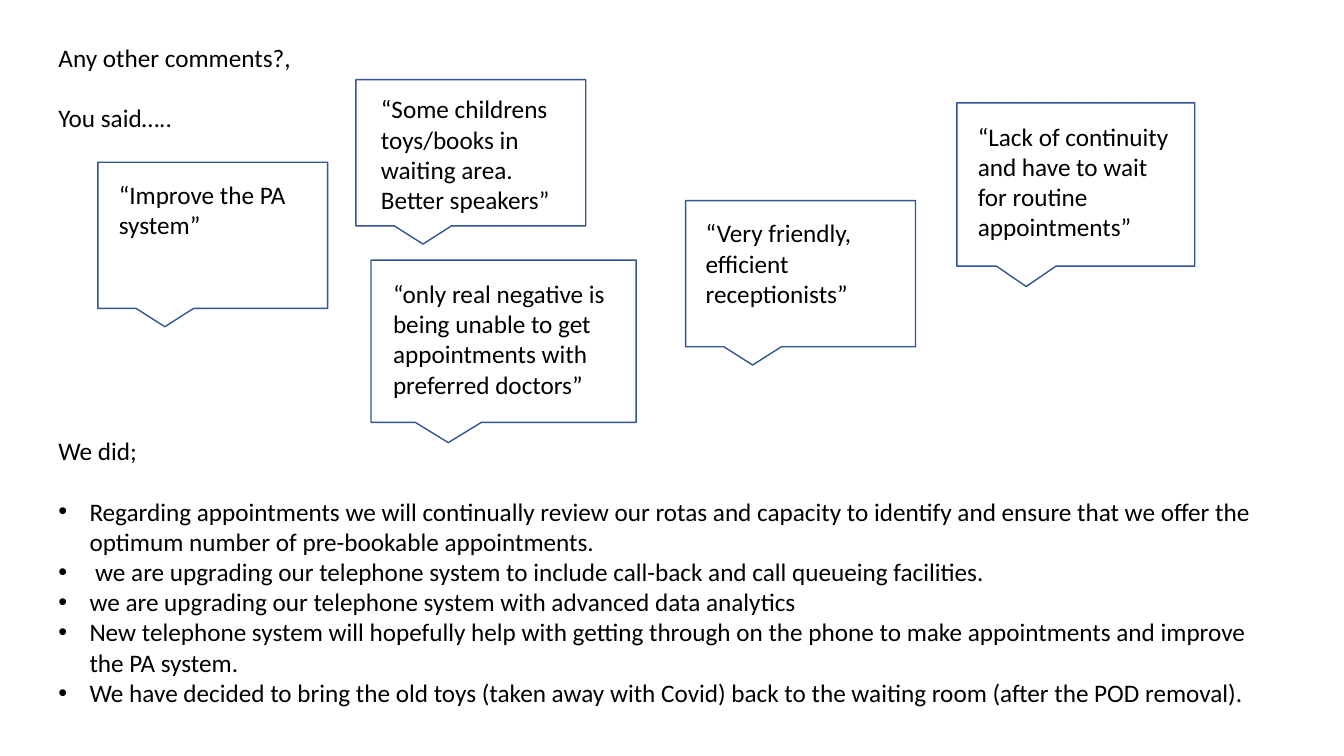
from pptx import Presentation
from pptx.dml.color import RGBColor
from pptx.enum.shapes import MSO_SHAPE as Shape
from pptx.enum.text import MSO_ANCHOR as Anchor, PP_ALIGN as Align
from pptx.util import Emu, Pt
from lxml import etree

PX = 9144  # EMU per px, 100 px to the inch
BLACK = RGBColor(0x00, 0x00, 0x00)
OUTLINE = RGBColor(0x32, 0x54, 0x91)
DRAWING_NS = "http://schemas.openxmlformats.org/drawingml/2006/main"
TITLE_ONLY = 5
LINE = 21.6  # pt, height of one line of text

# left, top, width, height, text inset right, text inset down, paragraphs
QUOTES = [
    (680, 199, 228, 145, 10, 12, ["“Very friendly, efficient receptionists”"]),
    (353, 79, 228, 145, 15, 9,
     ["“Some childrens toys/books in waiting area.", "Better speakers”"]),
    (949, 102, 236, 162, 11, 13,
     ["“Lack of continuity and have to wait for routine appointments”"]),
    (97, 161, 228, 145, 11, 12, ["“Improve the PA system”"]),
    (368, 258, 263, 161, 12, 13,
     ["“only real negative is being unable to get appointments with preferred doctors”"]),
]
ACTIONS = [
    "Regarding appointments we will continually review our rotas and capacity to identify "
    "and ensure that we offer the optimum number of pre-bookable appointments.",
    " we are upgrading our telephone system to include call-back and call queueing facilities.",
    "we are upgrading our telephone system with advanced data analytics",
    "New telephone system will hopefully help with getting through on the phone to make "
    "appointments and improve the PA system.",
    "We have decided to bring the old toys (taken away with Covid) back to the waiting room "
    "(after the POD removal).",
]


def px(*lengths):
    return [Emu(n * PX) for n in lengths]


def write(p, text, size=18, font="Calibri", color=BLACK, before=0, bullet=False):
    r = p.add_run()
    r.text = text
    r.font.size, r.font.name, r.font.color.rgb = Pt(size), font, color
    p.alignment, p.line_spacing = Align.LEFT, 1.0
    p.space_before = Pt(before)
    if bullet:
        pPr = p._p.get_or_add_pPr()
        indent = 31 * PX
        pPr.set("marL", str(indent))
        pPr.set("indent", str(-indent))
        etree.SubElement(pPr, f"{{{DRAWING_NS}}}buFont", typeface="Arial")
        etree.SubElement(pPr, f"{{{DRAWING_NS}}}buChar", char="•")


class Deck:
    def __init__(self):
        self.prs = Presentation()
        self.prs.slide_width, self.prs.slide_height = px(1333, 750)
        self.s = self.prs.slides.add_slide(self.prs.slide_layouts[TITLE_ONLY])

    def title(self, x, y, w, h, text):
        sp = self.s.shapes.title
        sp.left, sp.top, sp.width, sp.height = px(x, y, w, h)
        sp.text_frame.vertical_anchor = Anchor.TOP
        write(sp.text_frame.paragraphs[0], text)

    def text(self, x, y, w, h, paragraphs, shapes=None):
        """Add a text box; paragraphs are (text, format) pairs."""
        sp = (shapes or self.s.shapes).add_textbox(*px(x, y, w, h))
        tf = sp.text_frame
        tf.word_wrap = True
        for i, (text, style) in enumerate(paragraphs):
            write(tf.add_paragraph() if i else tf.paragraphs[0], text, **style)

    def quote(self, x, y, w, h, dx, dy, lines):
        """Group a speech callout with the text inside it."""
        shapes = self.s.shapes.add_group_shape().shapes
        sp = shapes.add_shape(Shape.RECTANGULAR_CALLOUT, *px(x, y, w, h))
        sp.shadow.inherit = False
        sp.fill.background()
        sp.line.color.rgb, sp.line.width = OUTLINE, Pt(1)
        self.text(x + dx, y + dy, w - 23, h - dy, [(t, {}) for t in lines], shapes)


def main():
    deck = Deck()
    deck.title(48, 37, 1237, 40, "Any other comments?,")
    deck.text(48, 97, 1237, 620, [
        ("You said…..", {}),
        ("We did;", {"before": 10 * LINE}),
        *((t, {"before": 0 if i else LINE, "bullet": True}) for i, t in enumerate(ACTIONS)),
    ])
    for quote in QUOTES:
        deck.quote(*quote)
    deck.prs.save("out.pptx")


if __name__ == "__main__":
    main()
